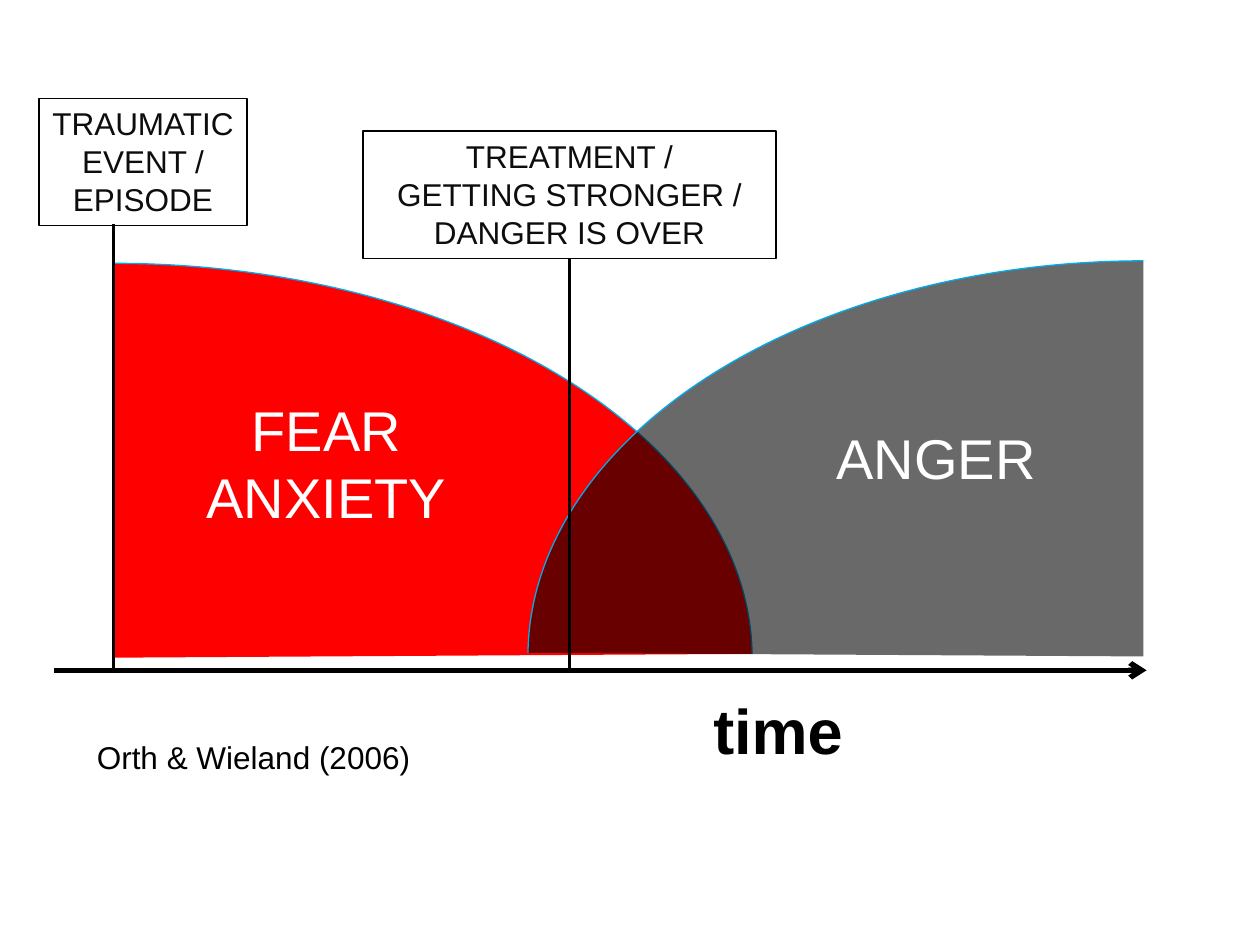
from dataclasses import dataclass

from pptx import Presentation
from pptx.dml.color import RGBColor
from pptx.enum.shapes import MSO_CONNECTOR as Conn, MSO_SHAPE as Kind
from pptx.enum.text import MSO_ANCHOR as Anchor, MSO_AUTO_SIZE as Fit, PP_ALIGN as Align
from pptx.oxml.ns import qn
from pptx.util import Inches, Pt
from lxml.etree import SubElement

BLACK = RGBColor(0, 0, 0)
WHITE = RGBColor(255, 255, 255)
INK = RGBColor(0x0D, 0x0D, 0x0D)
RED = RGBColor(255, 0, 0)
BLUE = RGBColor(0x00, 0xAC, 0xEB)
FONT = "Arial"
BASE = 5.31


@dataclass
class Box:
    left: float
    top: float
    width: float
    height: float

    def lengths(self) -> list:
        return [Inches(v) for v in (self.left, self.top, self.width, self.height)]


@dataclass
class Label:
    box: Box
    lines: tuple
    size: int
    color: RGBColor
    align: Align = Align.CENTER
    bold: bool = False
    framed: bool = False


@dataclass
class Curve:
    box: Box
    color: RGBColor
    alpha: int = 100
    flip: bool = False


CURVES = (
    Curve(Box(-4.17, 2.09, 10.14, 6.26), RED),
    Curve(Box(4.19, 2.07, 9.77, 6.28), BLACK, alpha=59, flip=True),
)
TEXTS = (
    Label(Box(4.09, 5.44, 4.17, 0.71), ("time",), 36, BLACK, bold=True),
    Label(Box(1.13, 3.09, 2.92, 1.18), ("FEAR", "ANXIETY"), 32, WHITE),
    Label(Box(5.97, 3.31, 2.92, 0.64), ("ANGER",), 32, WHITE),
    Label(Box(0.67, 5.81, 3.15, 0.4), ("Orth & Wieland (2006)",), 18, BLACK, Align.LEFT),
)
EVENT = Label(Box(0.31, 0.78, 1.65, 1.01), ("TRAUMATIC EVENT / EPISODE",),
              18, INK, framed=True)
CARE = Label(Box(2.88, 1.04, 3.28, 1.01),
             ("TREATMENT /", "GETTING STRONGER /", "DANGER IS OVER"),
             18, INK, framed=True)


def draw_curve(slide, curve: Curve) -> None:
    shape = slide.shapes.add_shape(Kind.ARC, *curve.box.lengths())
    shape.shadow.inherit = False
    shape.adjustments[0] = 162
    shape.adjustments[1] = 215.795
    shape.fill.solid()
    shape.fill.fore_color.rgb = curve.color
    shape.line.color.rgb = BLUE
    shape.line.width = Pt(0.75)
    props = shape._element.spPr
    if curve.flip:
        props.find(qn("a:xfrm")).set("flipH", "1")
    if curve.alpha < 100:
        color = props.find(qn("a:solidFill")).find(qn("a:srgbClr"))
        SubElement(color, qn("a:alpha")).set("val", str(curve.alpha * 1000))


def draw_label(slide, label: Label):
    if label.framed:
        shape = slide.shapes.add_shape(Kind.RECTANGLE, *label.box.lengths())
        shape.shadow.inherit = False
        shape.fill.background()
        shape.line.color.rgb = BLACK
        shape.line.width = Pt(0.75)
    else:
        shape = slide.shapes.add_textbox(*label.box.lengths())
    frame = shape.text_frame
    frame.word_wrap = True
    frame.auto_size = Fit.SHAPE_TO_FIT_TEXT
    frame.vertical_anchor = Anchor.TOP
    for i, line in enumerate(label.lines):
        para = frame.add_paragraph() if i else frame.paragraphs[0]
        para.alignment = label.align
        run = para.add_run()
        run.text = line
        run.font.name = FONT
        run.font.size = Pt(label.size)
        run.font.bold = label.bold
        run.font.color.rgb = label.color
    return shape


def draw_line(slide, start: tuple, end: tuple, width: float, arrow: bool = False):
    ends = [Inches(v) for v in start + end]
    link = slide.shapes.add_connector(Conn.STRAIGHT, *ends)
    link.line.color.rgb = BLACK
    link.line.width = Pt(width)
    if arrow:
        SubElement(link.line._get_or_add_ln(), qn("a:tailEnd")).set("type", "arrow")
    SubElement(link._element.spPr, qn("a:effectLst"))
    return link


def main() -> None:
    deck = Presentation()
    deck.slide_width, deck.slide_height = Inches(10), Inches(7.5)
    slide = deck.slides.add_slide(deck.slide_layouts[6])

    draw_line(slide, (0.43, 5.32), (9.1, 5.32), 3, arrow=True)
    for curve in CURVES:
        draw_curve(slide, curve)
    for label in TEXTS:
        draw_label(slide, label)

    draw_line(slide, (0.9, BASE), (0.9, 1.78), 2)
    draw_label(slide, EVENT)
    stem = draw_line(slide, (4.52, BASE), (4.52, 2.05), 2)
    stem.end_connect(draw_label(slide, CARE), 2)

    deck.save("out.pptx")


if __name__ == "__main__":
    main()
